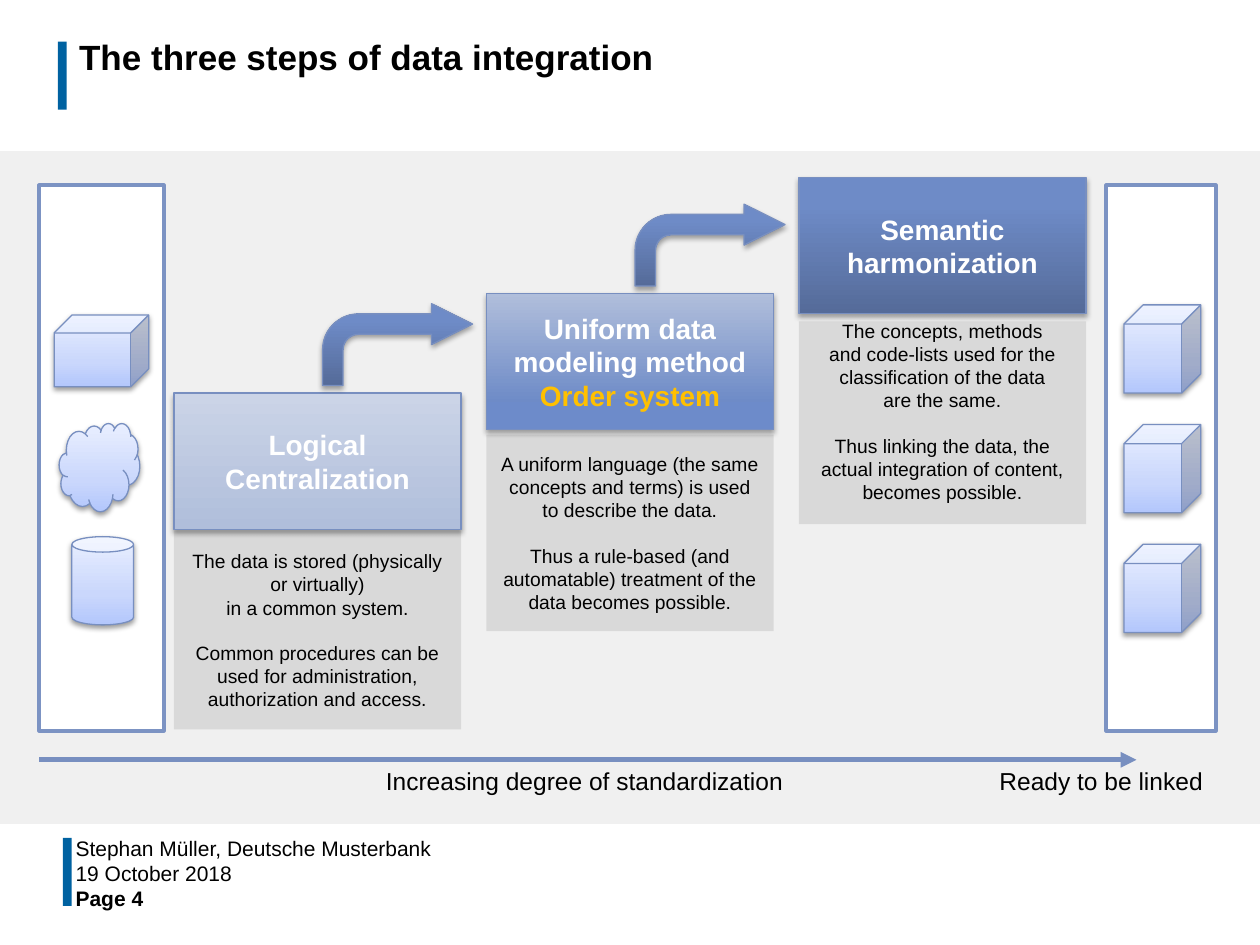
import copy
import pptx
import pptx.util
import pptx.dml.color
import pptx.enum.shapes
import pptx.enum.text
import pptx.oxml.ns
import lxml.etree

Inches = pptx.util.Inches
Pt = pptx.util.Pt
RGBColor = pptx.dml.color.RGBColor
KIND = pptx.enum.shapes.MSO_SHAPE
ALIGN = pptx.enum.text.PP_ALIGN
ANCHOR = pptx.enum.text.MSO_ANCHOR
qn = pptx.oxml.ns.qn

BLACK = RGBColor(0x00, 0x00, 0x00)
WHITE = RGBColor(0xFF, 0xFF, 0xFF)
GOLD = RGBColor(0xFF, 0xC0, 0x00)
NAVY = RGBColor(0x00, 0x62, 0xA1)
PALE = RGBColor(0xF0, 0xF0, 0xF0)
GREY = RGBColor(0xD9, 0xD9, 0xD9)
FRAME = RGBColor(0x7C, 0x93, 0xC3)
EDGE = RGBColor(0x78, 0x8F, 0xC0)
MIST = RGBColor(0xB0, 0xBE, 0xDB)
BLUE = RGBColor(0x6E, 0x8B, 0xC7)

# Gradient stops, from bottom to top
ICE = ((0, RGBColor(0xB3, 0xC7, 0xFC)), (0.35, RGBColor(0xCA, 0xD7, 0xFC)),
       (1, RGBColor(0xE9, 0xEF, 0xFF)))
DEEP = ((0, RGBColor(0x55, 0x6B, 0x99)), (0.2 * 4, BLUE),
        (1, RGBColor(0x6D, 0x8B, 0xCA)))
MID = ((0, RGBColor(0x6D, 0x8B, 0xCA)), (0.2, BLUE), (1, MIST))
LIGHT = ((0, MIST), (1, RGBColor(0xCB, 0xD4, 0xE7)))


def write(shape, *blocks, size=11, bold=False, tones=(BLACK,), align=ALIGN.CENTER,
          anchor=ANCHOR.MIDDLE, gap=0, pitch=None, inset=(0.1, 0.05, 0.1, 0.05)):
    """Write blocks of lines; each block has its tone, with a gap between blocks."""
    frame = shape.text_frame
    frame.word_wrap = True
    frame.vertical_anchor = anchor
    (frame.margin_left, frame.margin_top,
     frame.margin_right, frame.margin_bottom) = map(Inches, inset)
    para = frame.paragraphs[0]
    for i, block in enumerate(blocks):
        for j, line in enumerate(block.split("\n")):
            if i or j:
                para = frame.add_paragraph()
            para.alignment = align
            if i and not j:
                para.space_before = Pt(gap)
            if pitch:
                para.line_spacing = Pt(pitch)
            run = para.add_run()
            run.text = line
            run.font.name = "Arial"
            run.font.size = Pt(size)
            run.font.bold = bold
            run.font.color.rgb = tones[min(i, len(tones) - 1)]


def label(slide, box, *blocks, **style):
    write(slide.shapes.add_textbox(*map(Inches, box)), *blocks, **style)


def plain(slide, kind, box, fill, line=None, width=2):
    shape = slide.shapes.add_shape(kind, *map(Inches, box))
    shape.shadow.inherit = False
    shape.fill.solid()
    shape.fill.fore_color.rgb = fill
    if line is None:
        shape.line.fill.background()
    else:
        shape.line.color.rgb = line
        shape.line.width = Pt(width)
    return shape


def glossy(slide, kind, box, stops, alpha=35, drop=1.8):
    """Add a shape with a gradient, a thin edge and a soft shadow."""
    shape = plain(slide, kind, box, WHITE, EDGE, 0.75)
    shape.fill.gradient()
    shape.fill.gradient_angle = 90
    props = shape._element.spPr
    list_ = props.find(qn("a:gradFill")).find(qn("a:gsLst"))
    while len(list_) < len(stops):
        list_.append(copy.deepcopy(list_[0]))
    for stop, (place, color) in zip(shape.fill.gradient_stops, stops):
        stop.position = place
        stop.color.rgb = color
    shade = lxml.etree.SubElement(
        props.find(qn("a:effectLst")), qn("a:outerShdw"), blurRad=str(Pt(3.1)),
        dist=str(Pt(drop)), dir="5400000", rotWithShape="0")
    tint = lxml.etree.SubElement(shade, qn("a:srgbClr"), val="000000")
    lxml.etree.SubElement(tint, qn("a:alpha"), val=str(alpha * 1000))
    return shape


def draw_base(slide):
    plain(slide, KIND.RECTANGLE, (0, 1.2, 10, 5.34), PALE)
    for x, y in ((0.46, 0.33), (0.5, 6.65)):
        plain(slide, KIND.RECTANGLE, (x, y, 0.07, 0.54), NAVY)


def draw_title(slide, box):
    label(slide, box, "The three steps of data integration", size=20, bold=True,
          align=ALIGN.LEFT, anchor=ANCHOR.TOP, pitch=20.4)


def draw_foot(slide, x, y):
    rows = ((0, 8.88, "Stephan Müller, Deutsche Musterbank", False),
            (0.2, 2.31, "19 October 2018", False), (0.4, 2.31, "Page 4", True))
    for dy, w, words, bold in rows:
        label(slide, (x, y + dy, w, 0.18), words, size=12, bold=bold,
              align=ALIGN.LEFT, inset=(0.09, 0.04, 0.09, 0.04))


def draw_pane(slide, box, parts):
    """Draw a framed column; each part is (kind, dx, dy, width, height)."""
    x, y, w, h = box
    plain(slide, KIND.FLOWCHART_PROCESS, box, WHITE, FRAME)
    for kind, dx, dy, pw, ph in parts:
        glossy(slide, kind, (x + dx, y + dy, pw, ph), ICE, alpha=38, drop=1.6)


def draw_step(slide, x, y, head, tones, stops, drop, high, body, foot=0.05, arrow=True):
    """Draw a step: its body, its head, and the arrow to the next one."""
    w = 2.28
    card = plain(slide, KIND.RECTANGLE, (x, y + drop, w, high), GREY)
    write(card, *body, gap=12.65, inset=(0.1, 0.05, 0.1, foot))
    top = glossy(slide, KIND.RECTANGLE, (x, y, w, 1.08), stops)
    write(top, *head, size=16, bold=True, tones=tones)
    if arrow:
        bend = glossy(slide, KIND.BENT_ARROW, (x + 1.18, y - 0.71, 1.19, 0.65), DEEP)
        for i, value in enumerate((0.25, 0.25, 0.5, 0.44)):
            bend.adjustments[i] = value


def draw_steps(slide, x):
    pitch = 2.48
    draw_step(slide, x, 3.12, ("Logical\nCentralization",), (WHITE,), LIGHT, 1.09, 1.58, (
        "The data is stored (physically or virtually)\nin a common system.",
        "Common procedures can be used for administration, authorization and access."))
    draw_step(slide, x + pitch, 2.33, ("Uniform data\nmodeling method", "Order system"),
              (WHITE, GOLD), MID, 1.12, 1.56, (
        "A uniform language (the same concepts and terms) is used to describe the data.",
        "Thus a rule-based (and automatable) treatment of the data becomes possible."))
    draw_step(slide, x + 2 * pitch, 1.41, ("Semantic harmonization",), (WHITE,), DEEP,
              1.14, 1.61, (
        "The concepts, methods\nand code-lists used for the classification of the data\n"
        "are the same.",
        "Thus linking the data, the actual integration of content, becomes possible."),
        foot=0.23, arrow=False)


def draw_scale(slide, x, y):
    """Draw the long arrow and the words below it."""
    line = slide.shapes.add_connector(
        pptx.enum.shapes.MSO_CONNECTOR.STRAIGHT,
        *map(Inches, (x, y, x + 8.71, y)))
    line.line.color.rgb = EDGE
    line.line.width = Pt(3)
    lxml.etree.SubElement(line.line._get_or_add_ln(), qn("a:tailEnd"), type="triangle")
    lxml.etree.SubElement(line._element.spPr, qn("a:effectLst"))
    for dx, w, words in ((0, 8.66, "Increasing degree of standardization"),
                         (7.13, 2.6, "Ready to be linked")):
        label(slide, (x + dx, y, w, 0.31), words, size=14, anchor=ANCHOR.TOP)


def main():
    deck = pptx.Presentation()
    deck.slide_width, deck.slide_height = Inches(10), Inches(7.5)
    slide = deck.slides.add_slide(deck.slide_layouts[6])
    draw_base(slide)
    draw_title(slide, (0.53, 0.28, 8.87, 0.71))
    draw_foot(slide, 0.51, 6.64)
    # Mixed sources on the left, uniform cubes on the right
    draw_pane(slide, (0.31, 1.47, 0.99, 4.33), (
        (KIND.CUBE, 0.12, 1.03, 0.75, 0.57), (KIND.CAN, 0.26, 2.79, 0.49, 0.7),
        (KIND.CLOUD, 0.16, 1.89, 0.64, 0.7)))
    draw_steps(slide, 1.38)
    draw_pane(slide, (8.78, 1.47, 0.87, 4.33), [
        (KIND.CUBE, 0.14, 0.95 * (i + 1), 0.61, 0.7) for i in range(3)])
    draw_scale(slide, 0.31, 6.03)
    deck.save("out.pptx")


if __name__ == "__main__":
    main()
